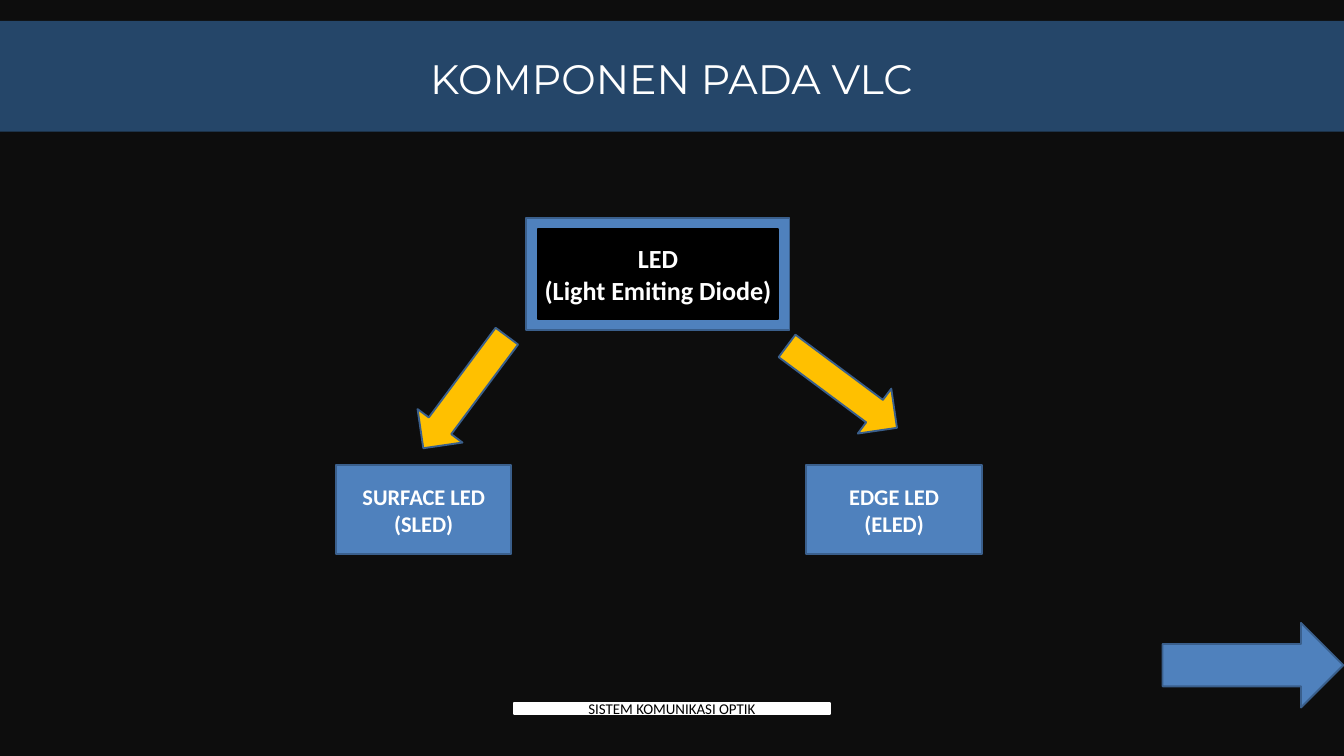
from pptx import Presentation
from pptx.dml.color import RGBColor
from pptx.enum import shapes, text
from pptx.util import Pt

KIND = shapes.MSO_SHAPE
NIGHT, NAVY, BLUE, EDGE = "0D0D0D", "254669", "4F81BD", "3A5F8C"
GOLD, WHITE, BLACK = "FFC000", "FFFFFF", "000000"

WIDTH, HEIGHT = 1440, 810
TITLE = "KOMPONEN PADA VLC"
ROOT = ["LED", "(Light Emiting Diode)"]
TYPES = [  # left edge, lines
    (360, ["SURFACE LED (SLED)"]),
    (864, ["EDGE LED", "(ELED)"]),
]
BRANCHES = [  # left, top, width, rotation of a left arrow
    (423.4, 390.2, 149.8, 306.7),
    (828.7, 384.5, 146.9, 216.7),
]
FOOTER = ["SISTEM KOMUNIKASI OPTIK"]


def colour(value):
    return RGBColor.from_string(value)


def add_text(para, words, font, size, ink, bold=False):
    para.alignment = text.PP_ALIGN.CENTER
    span = para.add_run()
    span.text = words
    span.font.name, span.font.size, span.font.bold = font, Pt(size), bold
    span.font.color.rgb = colour(ink)


def add_box(page, kind, left, top, width, height, fill, line=None):
    box = page.shapes.add_shape(kind, Pt(left), Pt(top), Pt(width), Pt(height))
    box.shadow.inherit = False
    box.fill.solid()
    box.fill.fore_color.rgb = colour(fill)
    if line:
        box.line.color.rgb = colour(line)
        box.line.width = Pt(2)
    else:
        box.line.fill.background()
    return box


def label(box, lines, size, ink=WHITE, bold=True):
    frame = box.text_frame
    frame.word_wrap = True
    frame.vertical_anchor = text.MSO_ANCHOR.MIDDLE
    for number, words in enumerate(lines):
        para = frame.add_paragraph() if number else frame.paragraphs[0]
        add_text(para, words, "Calibri", size, ink, bold)


def add_title(page):
    title = page.shapes.title
    title.left, title.top, title.width, title.height = Pt(321.8), Pt(56.2), Pt(795.6), Pt(54)
    frame = title.text_frame
    frame.margin_left = frame.margin_right = frame.margin_bottom = 0
    frame.margin_top = Pt(0.9)
    frame.vertical_anchor = text.MSO_ANCHOR.TOP
    frame.auto_size = text.MSO_AUTO_SIZE.SHAPE_TO_FIT_TEXT
    frame.paragraphs[0].space_before = Pt(0.9)
    add_text(frame.paragraphs[0], TITLE, "Montserrat", 44, WHITE)
    band = add_box(page, KIND.RECTANGLE, 0, 22.3, WIDTH, 118.8, NAVY)
    title._element.addprevious(band._element)  # the band lies behind the title


def main():
    deck = Presentation()
    deck.slide_width, deck.slide_height = Pt(WIDTH), Pt(HEIGHT)
    page = deck.slides.add_slide(deck.slide_layouts[5])
    page.background.fill.solid()
    page.background.fill.fore_color.rgb = colour(NIGHT)
    add_title(page)

    left, top, width, height, inset = 564, 233.5, 282, 120, 12
    add_box(page, KIND.RECTANGLE, left, top, width, height, BLUE, EDGE)
    root = add_box(page, KIND.RECTANGLE, left + inset, top + inset,
                   width - 2 * inset, height - 2 * inset, BLACK, BLACK)
    label(root, ROOT, 28)

    for left, top, width, angle in BRANCHES:
        arrow = add_box(page, KIND.LEFT_ARROW, left, top, width, 60, GOLD, EDGE)
        arrow.rotation = angle
    for left, lines in TYPES:
        box = add_box(page, KIND.RECTANGLE, left, 498, 188, 96, BLUE, EDGE)
        label(box, lines, 24)

    footer = add_box(page, KIND.RECTANGLE, 550.8, 753, 338.4, 12, WHITE, WHITE)
    label(footer, FOOTER, 16, BLACK, bold=False)
    add_box(page, KIND.RIGHT_ARROW, 1245.6, 667.4, 193.7, 90.7, BLUE, EDGE)
    deck.save("out.pptx")


if __name__ == "__main__":
    main()
